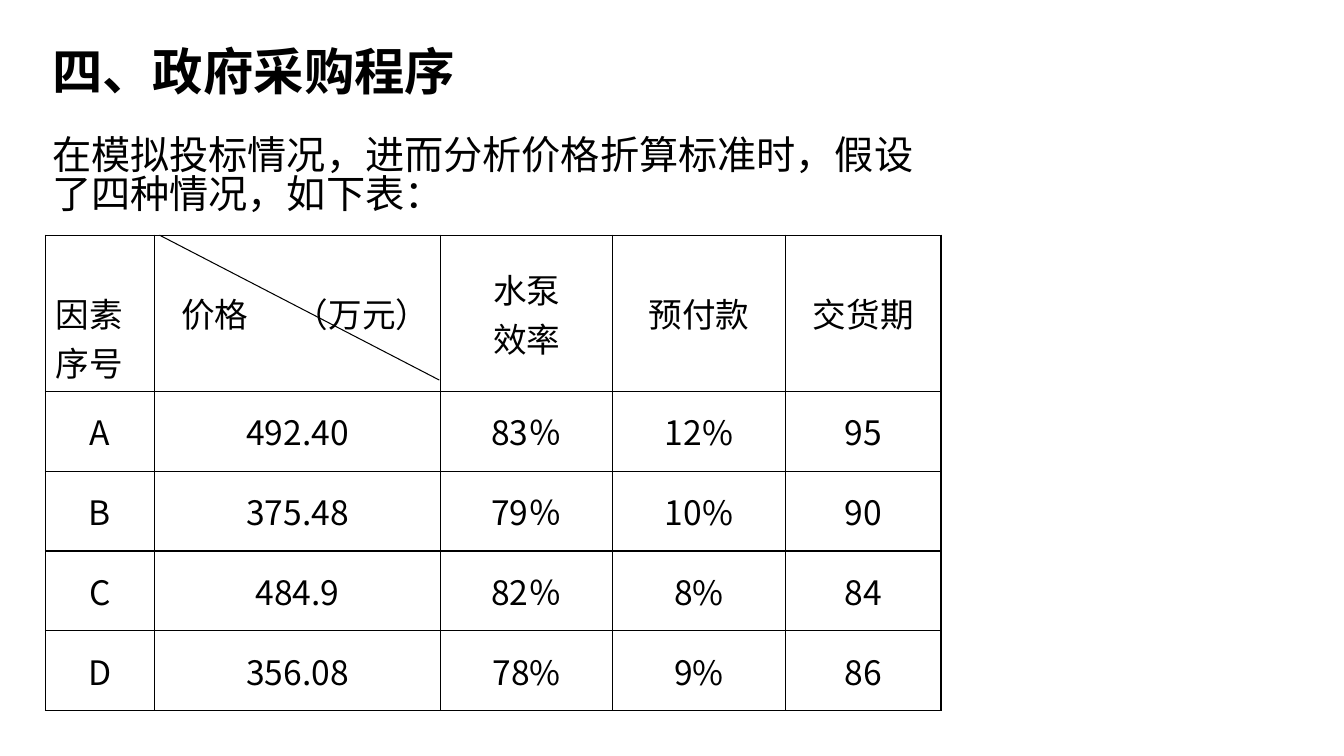
from lxml import etree
from pptx import Presentation
from pptx.dml.color import RGBColor
from pptx.enum import shapes, text
from pptx.oxml.ns import qn
from pptx.util import Pt

FONT = "Noto Sans CJK SC"
INK = "000000"
PAPER = "FFFFFF"

COLUMN_WIDTHS = [78, 204.4, 122.8, 123.6, 111]
HEADER_HEIGHT, BID_HEIGHT = 111.6, 57
PRICE_INDENT, UNIT_TAB = 12, 81
FACTORS = [["因素", "序号"], ["价格\t（万元）"], ["水泵", "效率"], ["预付款"], ["交货期"]]
BIDS = [
    ["A", "492.40", "83％", "12%", "95"],
    ["B", "375.48", "79％", "10%", "90"],
    ["C", "484.9", "82％", "8%", "84"],
    ["D", "356.08", "78%", "9%", "86"],
]


def color(hex_code):
    return RGBColor.from_string(hex_code)


def add_run(paragraph, words, size, bold=False):
    run = paragraph.add_run()
    run.text = words
    run.font.size, run.font.bold = Pt(size), bold
    run.font.name = FONT
    run.font.color.rgb = color(INK)
    etree.SubElement(run._r.get_or_add_rPr(), qn("a:ea"), typeface=FONT)


def fill_placeholder(holder, box, words, size, spacing, bold=False):
    holder.left, holder.top, holder.width, holder.height = (Pt(v) for v in box)
    frame = holder.text_frame
    frame.word_wrap = True
    frame.auto_size = text.MSO_AUTO_SIZE.NONE
    frame.vertical_anchor = text.MSO_ANCHOR.TOP
    paragraph = frame.paragraphs[0]
    paragraph.alignment = text.PP_ALIGN.LEFT
    paragraph.line_spacing = spacing
    paragraph.space_before = Pt(0)
    properties = paragraph._p.get_or_add_pPr()
    properties.set("marL", "0")
    properties.set("indent", "0")
    etree.SubElement(properties, qn("a:buNone"))
    add_run(paragraph, words, size, bold)


def border_cell(cell):
    """Draw all four sides; the lines must precede the cell's fill in the XML."""
    properties = cell._tc.get_or_add_tcPr()
    for position, side in enumerate(("lnL", "lnR", "lnT", "lnB")):
        line = etree.Element(qn(f"a:{side}"), w=str(Pt(1)))
        ink = etree.SubElement(line, qn("a:solidFill"))
        etree.SubElement(ink, qn("a:srgbClr"), val=INK)
        properties.insert(position, line)


def fill_cell(cell, lines):
    cell.fill.solid()
    cell.fill.fore_color.rgb = color(PAPER)
    border_cell(cell)
    cell.vertical_anchor = text.MSO_ANCHOR.MIDDLE
    frame = cell.text_frame
    for index, words in enumerate(lines):
        paragraph = frame.add_paragraph() if index else frame.paragraphs[0]
        paragraph.alignment = text.PP_ALIGN.CENTER
        add_run(paragraph, words, 24)


def format_price_header(cell):
    """Set the factor left and its unit right, at a tab stop."""
    cell.margin_left, cell.margin_right = Pt(7.2 + PRICE_INDENT), Pt(0)
    paragraph = cell.text_frame.paragraphs[0]
    paragraph.alignment = text.PP_ALIGN.LEFT
    tabs = etree.SubElement(paragraph._p.get_or_add_pPr(), qn("a:tabLst"))
    etree.SubElement(tabs, qn("a:tab"), pos=str(Pt(UNIT_TAB)), algn="l")


def add_bid_table(slide, left, top):
    heights = [HEADER_HEIGHT] + [BID_HEIGHT] * len(BIDS)
    frame = slide.shapes.add_table(
        len(heights), len(COLUMN_WIDTHS), Pt(left), Pt(top),
        Pt(sum(COLUMN_WIDTHS)), Pt(sum(heights)))
    bids = frame.table
    bids.first_row = bids.horz_banding = False
    for column, width in zip(bids.columns, COLUMN_WIDTHS):
        column.width = Pt(width)
    for row, height in zip(bids.rows, heights):
        row.height = Pt(height)
    rows = [FACTORS] + [[[value] for value in bid] for bid in BIDS]
    for row, contents in zip(bids.rows, rows):
        for cell, lines in zip(row.cells, contents):
            fill_cell(cell, lines)

    corner = bids.cell(0, 0)
    corner.vertical_anchor = text.MSO_ANCHOR.BOTTOM
    for paragraph in corner.text_frame.paragraphs:
        paragraph.alignment = text.PP_ALIGN.LEFT
    format_price_header(bids.cell(0, 1))

    price_left = left + COLUMN_WIDTHS[0]
    diagonal = slide.shapes.add_connector(
        shapes.MSO_CONNECTOR.STRAIGHT, Pt(price_left + 3.6), Pt(top),
        Pt(price_left + COLUMN_WIDTHS[1] - 1), Pt(top + 103.5))
    diagonal.line.color.rgb = color(INK)
    diagonal.line.width = Pt(0.75)
    etree.SubElement(diagonal._element.spPr, qn("a:effectLst"))


def build_bid_slide(deck):
    slide = deck.slides.add_slide(deck.slide_layouts[1])
    heading, lead = slide.placeholders
    fill_placeholder(heading, (30, 30, 605.5, 60), "四、政府采购程序", 36, 0.9, bold=True)
    fill_placeholder(lead, (30, 95, 636, 72),
                     "在模拟投标情况，进而分析价格折算标准时，假设了四种情况，如下表：", 28, 0.83)
    add_bid_table(slide, 32.4, 168)


def main():
    deck = Presentation()
    deck.slide_width, deck.slide_height = Pt(960), Pt(540)
    build_bid_slide(deck)
    deck.save("out.pptx")


if __name__ == "__main__":
    main()
